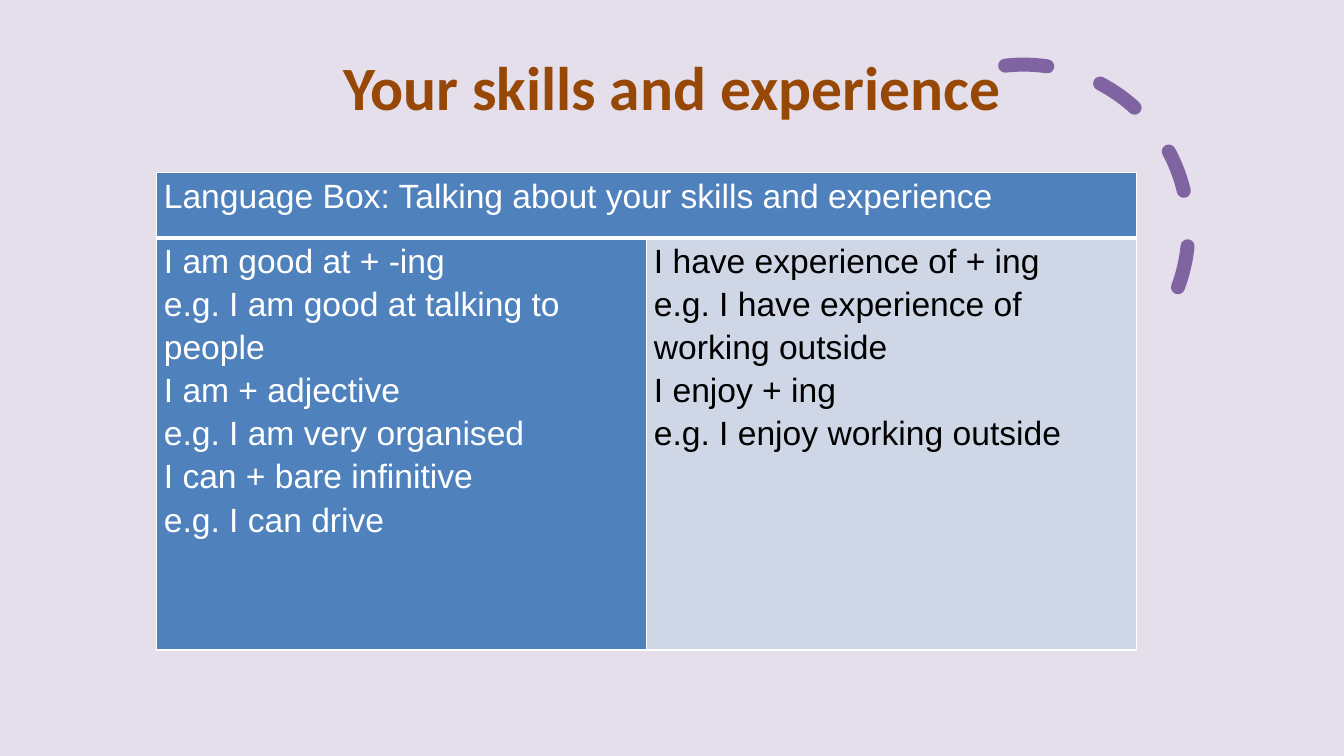
from pptx import Presentation
from pptx.dml.color import RGBColor as Rgb
from pptx.enum.dml import MSO_LINE as Dash
from pptx.enum.shapes import MSO_SHAPE as Shape
from pptx.enum.text import MSO_ANCHOR as Anchor, PP_ALIGN as Align
from pptx.oxml.ns import qn
from pptx.util import Cm, Pt
from lxml.etree import SubElement as Sub

HUES = {
    "back": "E5DFEC",
    "title": "974806",
    "arc": "8064A2",
    "blue": "4F81BD",
    "pale": "CFD7E7",
    "white": "FFFFFF",
    "black": "000000",
}
HEAD = "Language Box: Talking about your skills and experience"
LEFT = [
    "I am good at + -ing",
    "e.g. I am good at talking to people",
    "I am + adjective",
    "e.g. I am very organised",
    "I can + bare infinitive",
    "e.g. I can drive",
]
RIGHT = [
    "I have experience of + ing",
    "e.g. I have experience of working outside",
    "I enjoy + ing",
    "e.g. I enjoy working outside",
]


def hue(name):
    return Rgb.from_string(HUES[name])


def style(para, font, size, color, bold):
    for run in para.runs:
        run.font.name = font
        run.font.size = Pt(size)
        run.font.bold = bold
        run.font.color.rgb = hue(color)


def add_title(slide, text):
    title = slide.shapes.title
    title.left, title.top = Cm(2.34), Cm(1.02)
    title.width, title.height = Cm(29.21), Cm(2.31)
    frame = title.text_frame
    frame.text = text
    frame.vertical_anchor = Anchor.MIDDLE
    para = frame.paragraphs[0]
    para.alignment = Align.CENTER
    style(para, "Calibri", 44, "title", True)


def add_arc(slide):
    arc = slide.shapes.add_shape(Shape.ARC, Cm(21.64), Cm(1.63), Cm(8.31), Cm(8.31))
    arc.adjustments[0] = 158.17
    arc.adjustments[1] = 17.81
    arc.shadow.inherit = False
    arc.fill.background()
    arc.line.color.rgb = hue("arc")
    arc.line.width = Pt(10)
    arc.line.dash_style = Dash.DASH
    line = arc.line._get_or_add_ln()
    line.set("cap", "rnd")
    Sub(line, qn("a:round"))


def add_edges(cell, top, base):
    props = cell._tc.get_or_add_tcPr()
    for side, width in (("L", 1), ("R", 1), ("T", top), ("B", base)):
        edge = Sub(props, qn("a:ln" + side), w=str(Pt(width)))
        fill = Sub(edge, qn("a:solidFill"))
        Sub(fill, qn("a:srgbClr"), val=HUES["white"])


def fill_cell(cell, lines, fill, color):
    cell.margin_left = cell.margin_right = Cm(0.19)
    cell.margin_top = cell.margin_bottom = 0
    cell.fill.solid()
    cell.fill.fore_color.rgb = hue(fill)
    cell.text_frame.text = "\n".join(lines)
    for para in cell.text_frame.paragraphs:
        para.line_spacing = 1.15
        style(para, "Arial", 24, color, False)


def add_box(slide):
    frame = slide.shapes.add_table(2, 2, Cm(3.94), Cm(4.34), Cm(24.7), Cm(12.04))
    table = frame.table
    for col in table.columns:
        col.width = Cm(12.35)
    for row, height in zip(table.rows, (1.65, 10.39)):
        row.height = Cm(height)
    for col in range(2):
        add_edges(table.cell(0, col), 1, 3)
        add_edges(table.cell(1, col), 3, 1)
    table.cell(0, 0).merge(table.cell(0, 1))
    fill_cell(table.cell(0, 0), [HEAD], "blue", "white")
    fill_cell(table.cell(1, 0), LEFT, "blue", "white")
    fill_cell(table.cell(1, 1), RIGHT, "pale", "black")


def main():
    deck = Presentation()
    deck.slide_width, deck.slide_height = Cm(33.87), Cm(19.05)
    slide = deck.slides.add_slide(deck.slide_layouts[5])
    slide.background.fill.solid()
    slide.background.fill.fore_color.rgb = hue("back")
    add_arc(slide)
    add_title(slide, "Your skills and experience")
    add_box(slide)
    deck.save("out.pptx")


if __name__ == "__main__":
    main()
